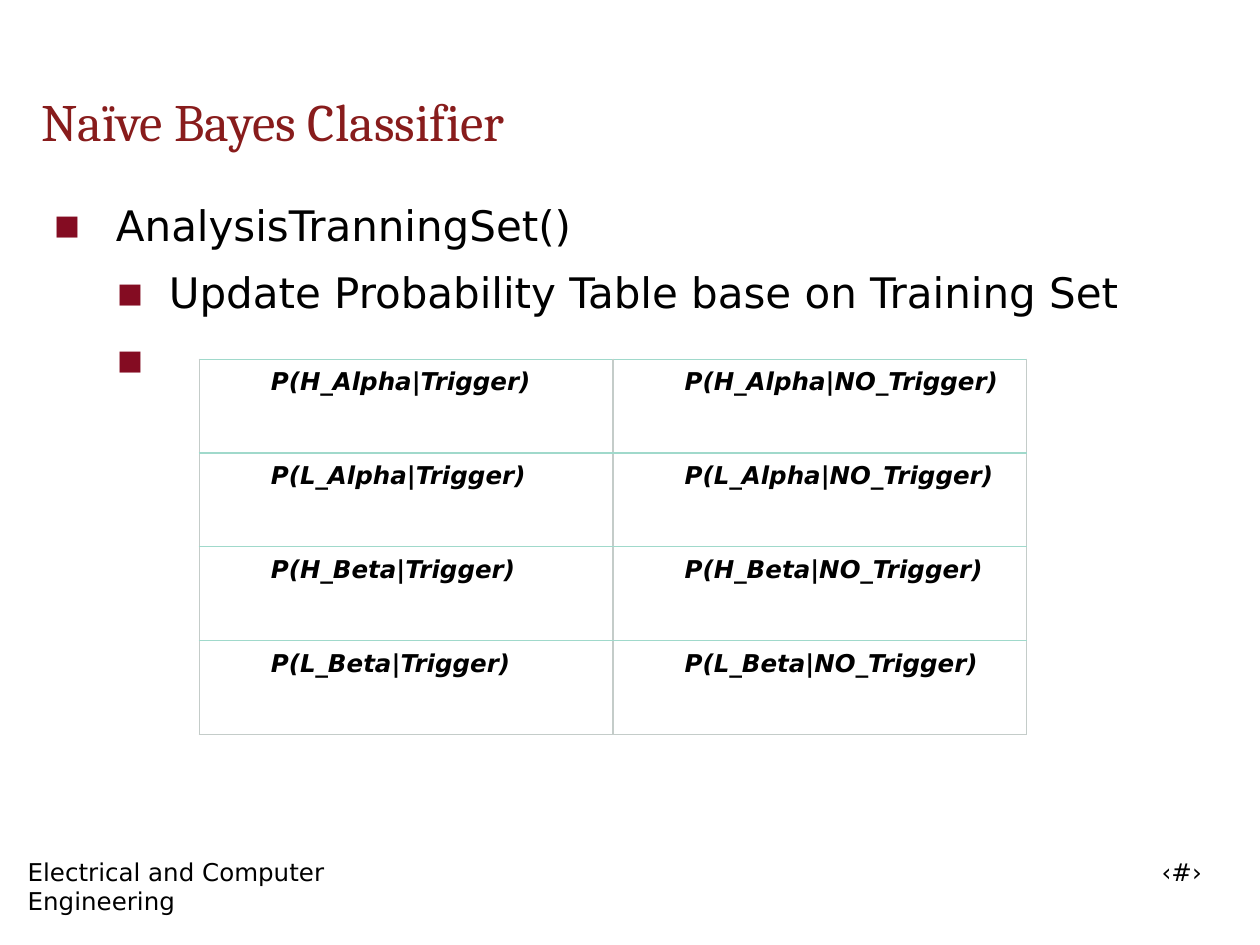
from lxml import etree
from pptx import Presentation
from pptx.dml.color import RGBColor
from pptx.enum.text import MSO_ANCHOR, MSO_AUTO_SIZE, PP_ALIGN
from pptx.oxml.ns import qn
from pptx.util import Inches, Pt

LEFT = PP_ALIGN.LEFT
TOP, MIDDLE = MSO_ANCHOR.TOP, MSO_ANCHOR.MIDDLE
NO_AUTOFIT = MSO_AUTO_SIZE.NONE

SANS, SERIF = "DejaVu Sans", "Cambria"
BLACK, WHITE, MAROON, BULLET_RED = "000000", "FFFFFF", "881C1C", "840C22"
TEAL, GREY = "A0D9CB", "C4CCC9"

BULLETS = [
    (0, "AnalysisTranningSet()"),
    (1, "Update Probability Table base on Training Set"),
    (1, " "),
]
LEVEL_INDENTS = [(0.5, -0.5), (0.92, -0.42)]
FEATURES = ["H_Alpha", "L_Alpha", "H_Beta", "L_Beta"]
OUTCOMES = ["Trigger", "NO_Trigger"]


def color(hex_string):
    return RGBColor.from_string(hex_string)


def add_run(para, text, size, font=SANS, fill=BLACK, strong=False):
    span = para.add_run()
    span.text = text
    span.font.name = font
    span.font.size = Pt(size)
    span.font.bold = span.font.italic = strong
    span.font.color.rgb = color(fill)


def place(shape, box):
    shape.left, shape.top, shape.width, shape.height = map(Inches, box)


def set_frame(frame, inset, anchor):
    frame.word_wrap = True
    frame.auto_size = NO_AUTOFIT
    frame.vertical_anchor = anchor
    frame.margin_left = frame.margin_right = Inches(inset)
    frame.margin_top = frame.margin_bottom = Inches(inset)


def set_indent(para, margin, first_line):
    properties = para._p.get_or_add_pPr()
    properties.set("marL", str(Inches(margin)))
    properties.set("indent", str(Inches(first_line)))
    return properties


def add_bullet(properties):
    bullet_color = etree.SubElement(properties, qn("a:buClr"))
    etree.SubElement(bullet_color, qn("a:srgbClr"), val=BULLET_RED)
    etree.SubElement(properties, qn("a:buFont"), typeface=SANS)
    etree.SubElement(properties, qn("a:buChar"), char="▪")


def fill_title(page, box):
    title = page.shapes.title
    place(title, box)
    set_frame(title.text_frame, 0, MIDDLE)
    para = title.text_frame.paragraphs[0]
    para.alignment = LEFT
    add_run(para, "Naïve Bayes Classifier", 30, SERIF, MAROON)


def fill_body(page, box):
    body = page.placeholders[1]
    place(body, box)
    frame = body.text_frame
    set_frame(frame, 0, TOP)
    for index, (level, text) in enumerate(BULLETS):
        para = frame.add_paragraph() if index else frame.paragraphs[0]
        para.level = level
        add_bullet(set_indent(para, *LEVEL_INDENTS[level]))
        para.line_spacing = 1.2
        para.space_before = Pt(4 if index else 0)
        add_run(para, text, 24)


def add_borders(cell):
    properties = cell._tc.get_or_add_tcPr()
    for side, line_color in (("L", GREY), ("R", GREY), ("T", TEAL), ("B", GREY)):
        line = etree.SubElement(properties, qn("a:ln" + side), w=str(Pt(0.75)))
        fill = etree.SubElement(line, qn("a:solidFill"))
        etree.SubElement(fill, qn("a:srgbClr"), val=line_color)


def add_probability_table(page, box):
    left, top, width, height = map(Inches, box)
    table = page.shapes.add_table(
        len(FEATURES), len(OUTCOMES), left, top, width, height).table
    table.first_row = table.horz_banding = False
    for row, feature in enumerate(FEATURES):
        for column, outcome in enumerate(OUTCOMES):
            cell = table.cell(row, column)
            cell.margin_left = cell.margin_right = Inches(0.07)
            cell.margin_top = cell.margin_bottom = Inches(0.07)
            add_borders(cell)
            cell.fill.solid()
            cell.fill.fore_color.rgb = color(WHITE)
            para = cell.text_frame.paragraphs[0]
            set_indent(para, 0, 0.5)
            add_run(para, f"P({feature}|{outcome})", 14, strong=True)


def add_footer_text(page, box, text):
    frame = page.shapes.add_textbox(*map(Inches, box)).text_frame
    set_frame(frame, 0.05, TOP)
    add_run(frame.paragraphs[0], text, 14)


def main():
    deck = Presentation()
    deck.slide_width, deck.slide_height = Inches(10), Inches(7.5)
    page = deck.slides.add_slide(deck.slide_layouts[1])

    # Footer: page number and department
    add_footer_text(page, (9.17, 6.75, 0.67, 0.34), "‹#›")
    add_footer_text(page, (0.17, 6.75, 3.67, 0.33),
                    "Electrical and Computer Engineering")

    # Title, list and probability table
    fill_title(page, (0.33, 0.67, 9.67, 0.58))
    fill_body(page, (0.42, 1.5, 8.92, 4.92))
    add_probability_table(page, (1.58, 2.85, 6.57, 2.98))

    deck.save("out.pptx")


if __name__ == "__main__":
    main()
